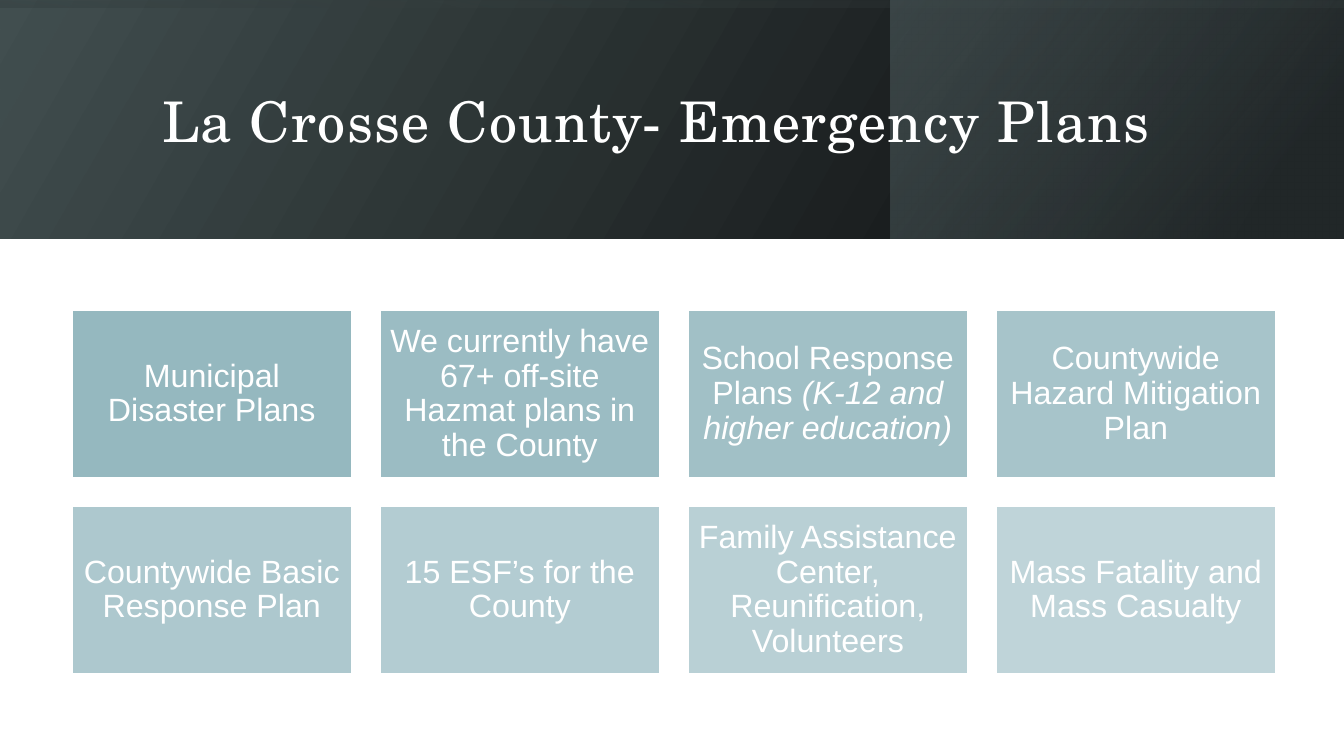
from lxml import etree
from pptx import Presentation
from pptx.dml.color import RGBColor
from pptx.enum.shapes import MSO_SHAPE
from pptx.enum.text import MSO_ANCHOR, MSO_AUTO_SIZE, PP_ALIGN
from pptx.oxml.ns import qn
from pptx.util import Pt

RECTANGLE = MSO_SHAPE.RECTANGLE
MIDDLE = MSO_ANCHOR.MIDDLE
NO_AUTOFIT = MSO_AUTO_SIZE.NONE
LEFT, CENTER = PP_ALIGN.LEFT, PP_ALIGN.CENTER

WHITE = RGBColor(0xFF, 0xFF, 0xFF)
BLACK = RGBColor(0x00, 0x00, 0x00)
SLATE = RGBColor(0x42, 0x4F, 0x50)
DARK_SLATE = RGBColor(0x2C, 0x34, 0x36)
LIGHT_SLATE = RGBColor(0x58, 0x69, 0x6B)
FIRST_TILE = RGBColor(0x95, 0xB8, 0xBF)
LAST_TILE = RGBColor(0xBF, 0xD4, 0xD9)

TITLE = "La Crosse County- Emergency Plans"
TITLE_BOX = (152, 38, 1072, 173)
PLANS = [
    [("Municipal Disaster Plans", False)],
    [("We currently have 67+ off-site Hazmat plans in the County", False)],
    [("School Response Plans ", False), ("(K-12 and higher education)", True)],
    [("Countywide Hazard Mitigation Plan", False)],
    [("Countywide Basic Response Plan", False)],
    [("15 ESF’s for the County", False)],
    [("Family Assistance Center, Reunification, Volunteers", False)],
    [("Mass Fatality and Mass Casualty", False)],
]
BANDS = [
    ((0, 0, 1344, 239), 0, 330, [(0, BLACK, 96), (100, SLATE, 100)]),
    ((891, 0, 452, 239), 0, 320, [(19, DARK_SLATE, 68), (100, LIGHT_SLATE, 48)]),
    ((552, -552, 239, 1344), 270, 350, [(23, SLATE, 16), (99, BLACK, 45)]),
]
COLUMNS = 4
TILE_LEFT, TILE_TOP = 72, 310
TILE_WIDTH, TILE_HEIGHT, TILE_GAP = 280, 168, 28
TILE_INSET = 9
EMU_PER_PX = 914400 / 100.8


def px(*lengths):
    return [round(length * EMU_PER_PX) for length in lengths]


def add_rectangle(slide, box):
    shape = slide.shapes.add_shape(RECTANGLE, *px(*box))
    shape.shadow.inherit = False
    return shape


def set_gradient(shape, angle, stops):
    shape.fill.gradient()
    gradient = shape._element.spPr.find(qn("a:gradFill"))
    for child in list(gradient):
        gradient.remove(child)
    stop_list = etree.SubElement(gradient, qn("a:gsLst"))
    for position, color, opacity in stops:
        stop = etree.SubElement(stop_list, qn("a:gs"), pos=str(position * 1000))
        fill = etree.SubElement(stop, qn("a:srgbClr"), val=str(color))
        if opacity < 100:
            etree.SubElement(fill, qn("a:alpha"), val=str(opacity * 1000))
    etree.SubElement(gradient, qn("a:lin"), ang=str(angle * 60000), scaled="0")


def add_band(slide, box, rotation, angle, stops):
    band = add_rectangle(slide, box)
    band.rotation = rotation
    band._element.spPr.find(qn("a:xfrm")).set("flipH", "1")
    band.line.fill.background()
    set_gradient(band, angle, stops)


def format_paragraph(paragraph, font_name, size, alignment):
    paragraph.alignment = alignment
    paragraph.line_spacing = 0.9
    paragraph.font.name = font_name
    paragraph.font.size = Pt(size)
    paragraph.font.color.rgb = WHITE


def place_title(slide):
    title = slide.shapes.title
    title.left, title.top, title.width, title.height = px(*TITLE_BOX)
    frame = title.text_frame
    frame.text = TITLE
    frame.word_wrap = True
    frame.auto_size = NO_AUTOFIT
    frame.vertical_anchor = MIDDLE
    paragraph = frame.paragraphs[0]
    format_paragraph(paragraph, "TeX Gyre Schola", 40, LEFT)
    paragraph.runs[0]._r.get_or_add_rPr().set("spc", "100")
    slide.shapes._spTree.append(title._element)


def add_tile(slide, index, plan):
    row, column = divmod(index, COLUMNS)
    left = TILE_LEFT + column * (TILE_WIDTH + TILE_GAP)
    top = TILE_TOP + row * (TILE_HEIGHT + TILE_GAP)
    tile = add_rectangle(slide, (left, top, TILE_WIDTH, TILE_HEIGHT))
    share = index / (len(PLANS) - 1)
    tile.fill.solid()
    tile.fill.fore_color.rgb = RGBColor(*(
        round(first + (last - first) * share)
        for first, last in zip(FIRST_TILE, LAST_TILE)))
    tile.line.color.rgb = WHITE
    tile.line.width = Pt(1)
    frame = tile.text_frame
    frame.word_wrap = True
    frame.vertical_anchor = MIDDLE
    (frame.margin_left, frame.margin_top,
     frame.margin_right, frame.margin_bottom) = px(*[TILE_INSET] * 4)
    paragraph = frame.paragraphs[0]
    format_paragraph(paragraph, "Arial", 23, CENTER)
    for text, italic in plan:
        run = paragraph.add_run()
        run.text = text
        if italic:
            run.font.italic = True


def main():
    presentation = Presentation()
    presentation.slide_width, presentation.slide_height = px(1344, 756)
    slide = presentation.slides.add_slide(presentation.slide_layouts[5])
    for band in BANDS:
        add_band(slide, *band)
    place_title(slide)
    for index, plan in enumerate(PLANS):
        add_tile(slide, index, plan)
    presentation.save("out.pptx")


if __name__ == "__main__":
    main()
